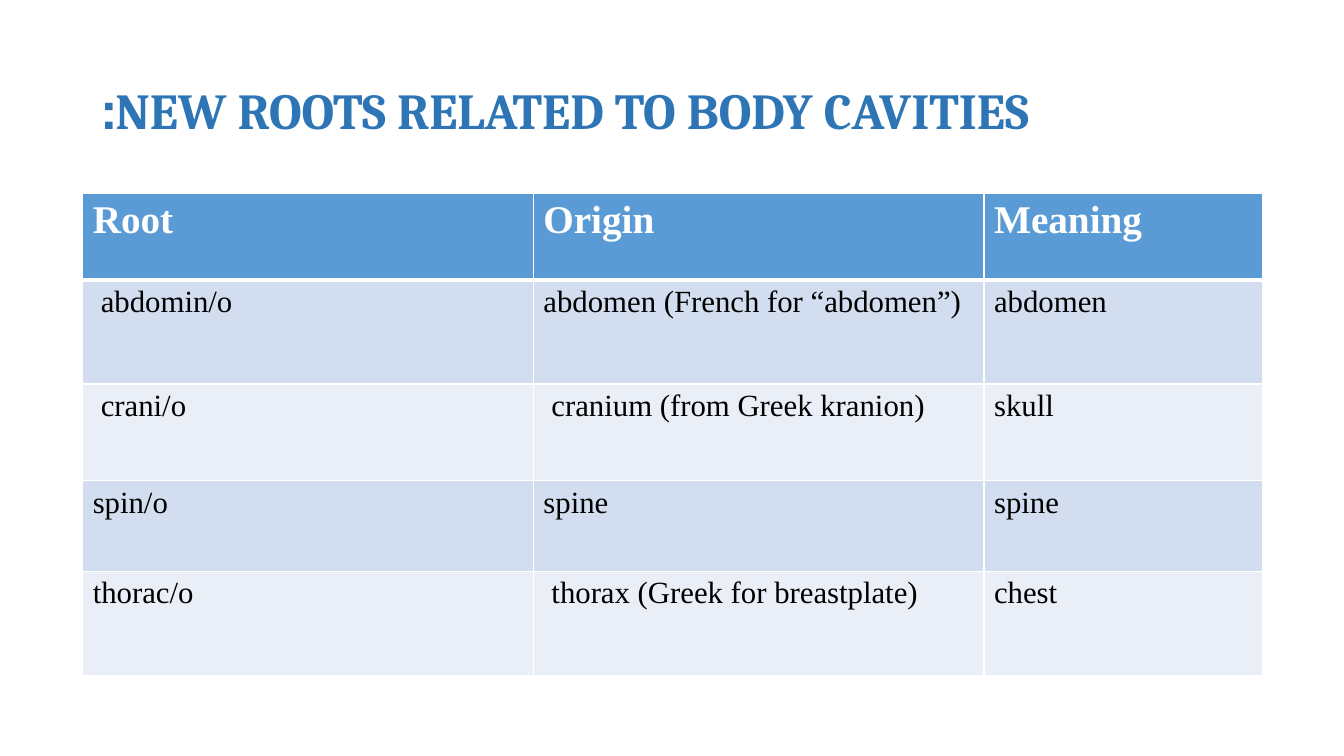
from lxml.etree import SubElement
from pptx import Presentation
from pptx.dml.color import RGBColor as Color
from pptx.enum.text import MSO_ANCHOR as Anchor, PP_ALIGN as Align
from pptx.oxml.ns import qn
from pptx.util import Inches, Pt

COLORS = {
    "title": "2E75B6",
    "header": "5B9BD5",
    "odd": "D2DEEF",
    "even": "EAEFF7",
    "white": "FFFFFF",
    "black": "000000",
}
WIDTH, HEIGHT = 13.33, 7.5
COLUMNS = (4.47, 4.47, 2.76)
ROWS = (0.86, 1.03, 0.96, 0.9, 1.03)
ROOTS = (
    ("Root", "Origin", "Meaning"),
    ("abdomin/o", "abdomen (French for “abdomen”)", "abdomen"),
    ("crani/o", "cranium (from Greek kranion)", "skull"),
    ("spin/o", "spine", "spine"),
    ("thorac/o", "thorax (Greek for breastplate)", "chest"),
)
INDENTED = {(1, 0), (2, 0), (2, 1), (4, 1)}


def write(frame, text, font, size, color, bold):
    """Write one right-to-left paragraph set flush left."""
    para = frame.paragraphs[0]
    para.text = text
    para.alignment = Align.LEFT
    para._p.get_or_add_pPr().set("rtl", "1")
    para.font.name = font
    para.font.size = Pt(size)
    para.font.bold = bold
    para.font.color.rgb = Color.from_string(COLORS[color])


def add_title(page, text):
    """Add the heading above the table."""
    box = page.shapes.add_textbox(Inches(0.92), Inches(0.4), Inches(9.88), Inches(1.45))
    frame = box.text_frame
    frame.word_wrap = True
    frame.vertical_anchor = Anchor.MIDDLE
    write(frame, text, "Cambria", 36, "title", True)
    frame.paragraphs[0].line_spacing = 0.9


def add_borders(cell, top, bottom):
    """Draw white lines around a cell, with widths in points."""
    properties = cell._tc.get_or_add_tcPr()
    for side, width in (("L", 1), ("R", 1), ("T", top), ("B", bottom)):
        line = SubElement(properties, qn(f"a:ln{side}"), w=str(Pt(width)))
        fill = SubElement(line, qn("a:solidFill"))
        SubElement(fill, qn("a:srgbClr"), val=COLORS["white"])


def fill_cell(cell, row, column, text):
    """Style and fill one cell by its place in the table."""
    header = row == 0
    add_borders(cell, 3 if row == 1 else 1, 3 if header else 1)
    shade = "header" if header else ("even", "odd")[row % 2]
    cell.fill.solid()
    cell.fill.fore_color.rgb = Color.from_string(COLORS[shade])
    if (row, column) in INDENTED:
        cell.margin_left = Inches(0.18)
    size, color = (28, "white") if header else (22, "black")
    write(cell.text_frame, text, "Times New Roman", size, color, header)


def add_roots_table(page):
    """Add the table of roots, origins and meanings."""
    frame = page.shapes.add_table(
        len(ROWS), len(COLUMNS), Inches(0.82), Inches(1.92),
        Inches(sum(COLUMNS)), Inches(sum(ROWS)),
    )
    table = frame.table
    for column, width in zip(table.columns, COLUMNS):
        column.width = Inches(width)
    for row, height in zip(table.rows, ROWS):
        row.height = Inches(height)
    for row, texts in enumerate(ROOTS):
        for column, text in enumerate(texts):
            fill_cell(table.cell(row, column), row, column, text)


def main():
    """Build and save the slide."""
    deck = Presentation()
    deck.slide_width, deck.slide_height = Inches(WIDTH), Inches(HEIGHT)
    page = deck.slides.add_slide(deck.slide_layouts[6])
    add_title(page, "NEW ROOTS RELATED TO BODY CAVITIES:")
    add_roots_table(page)
    deck.save("out.pptx")


if __name__ == "__main__":
    main()
